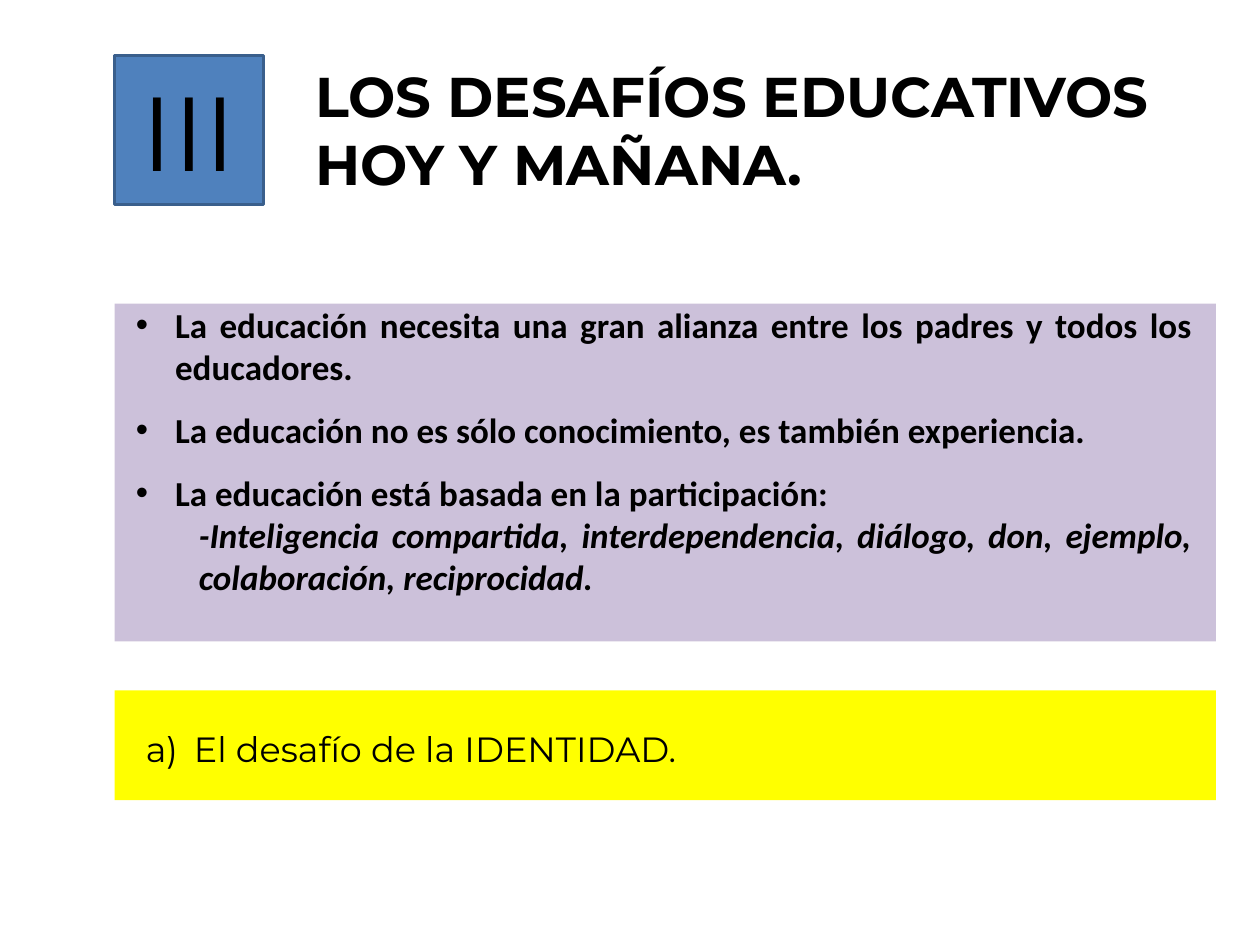
from dataclasses import dataclass

from lxml import etree
from pptx import Presentation
from pptx.dml.color import RGBColor
from pptx.enum.shapes import MSO_SHAPE
from pptx.enum.text import MSO_ANCHOR, PP_ALIGN
from pptx.oxml.ns import qn
from pptx.util import Cm, Pt

RECTANGLE = MSO_SHAPE.RECTANGLE
TOP, MIDDLE = MSO_ANCHOR.TOP, MSO_ANCHOR.MIDDLE
LEFT, CENTER, JUSTIFY = PP_ALIGN.LEFT, PP_ALIGN.CENTER, PP_ALIGN.JUSTIFY


@dataclass(frozen=True)
class Theme:
    ink: str = "000000"
    numeral_fill: str = "4F81BD"
    numeral_line: str = "3A5F8C"
    ideas_fill: str = "CCC1DA"
    challenge_fill: str = "FFFF00"
    heading_font: str = "Montserrat"
    body_font: str = "Calibri"
    numeral_size: int = 60
    title_size: int = 32
    body_size: int = 20


THEME = Theme()


def add_panel(left, top, width, height, fill, line=None):
    panel = slide.shapes.add_shape(RECTANGLE, Cm(left), Cm(top), Cm(width), Cm(height))
    panel.shadow.inherit = False
    panel.fill.solid()
    panel.fill.fore_color.rgb = RGBColor.from_string(fill)
    if line:
        panel.line.color.rgb = RGBColor.from_string(line)
        panel.line.width = Pt(2)
    else:
        panel.line.fill.background()
    return panel


def write(paragraph, text, *, size, font=THEME.heading_font, bold=False, italic=False,
          align=LEFT, indent=0, hanging=0, bullet=None, level=0, before=0):
    paragraph.alignment = align
    paragraph.level = level
    paragraph.space_before = Pt(before)
    properties = paragraph._p.get_or_add_pPr()
    properties.set("marL", str(Cm(indent)))
    properties.set("indent", str(-Cm(hanging)))
    if bullet:
        etree.SubElement(properties, qn("a:buFont")).set("typeface", "Arial")
        etree.SubElement(properties, qn("a:buChar")).set("char", bullet)
    run = paragraph.add_run()
    run.text = text
    run.font.name = font
    run.font.size = Pt(size)
    run.font.bold = bold
    run.font.italic = italic
    run.font.color.rgb = RGBColor.from_string(THEME.ink)


presentation = Presentation()
presentation.slide_width, presentation.slide_height = Cm(25.4), Cm(19.05)
slide = presentation.slides.add_slide(presentation.slide_layouts[5])

MARGIN, CONTENT_WIDTH = 2.31, 22.2
HEADER_TOP, HEADER_HEIGHT = 1.12, 3

# Title
title = slide.shapes.title
title.left, title.top = Cm(6.1), Cm(HEADER_TOP)
title.width, title.height = Cm(18.4), Cm(HEADER_HEIGHT)
heading = title.text_frame
heading.vertical_anchor = TOP
heading.word_wrap = True
heading.add_paragraph()
for paragraph, line in zip(heading.paragraphs, ("LOS DESAFÍOS EDUCATIVOS", "HOY Y MAÑANA.")):
    write(paragraph, line, size=THEME.title_size, bold=True)

# Section numeral
numeral = add_panel(MARGIN, HEADER_TOP, HEADER_HEIGHT, HEADER_HEIGHT,
                    THEME.numeral_fill, THEME.numeral_line).text_frame
numeral.vertical_anchor = MIDDLE
numeral.margin_top = numeral.margin_bottom = 0
write(numeral.paragraphs[0], "III", size=THEME.numeral_size, align=CENTER)

# Main ideas
ideas = add_panel(MARGIN, 6.12, CONTENT_WIDTH, 6.81, THEME.ideas_fill).text_frame
ideas.vertical_anchor = TOP
ideas.word_wrap = True
ideas.margin_left, ideas.margin_right, ideas.margin_top = Cm(0.43), Cm(0.48), 0
BULLETED = {"bullet": "•", "indent": 0.79, "hanging": 0.79}
IDEAS = [
    ("La educación necesita una gran alianza entre los padres y todos los educadores.", BULLETED),
    ("La educación no es sólo conocimiento, es también experiencia.", BULLETED | {"before": 12}),
    ("La educación está basada en la participación:", BULLETED | {"before": 12}),
    ("-Inteligencia compartida, interdependencia, diálogo, don, ejemplo, "
     "colaboración, reciprocidad.", {"level": 1, "indent": 1.27, "italic": True}),
]
for number, (idea, layout) in enumerate(IDEAS):
    paragraph = ideas.add_paragraph() if number else ideas.paragraphs[0]
    write(paragraph, idea, size=THEME.body_size, font=THEME.body_font, bold=True,
          align=JUSTIFY, **layout)

# First challenge
challenge = add_panel(MARGIN, 13.92, CONTENT_WIDTH, 2.21, THEME.challenge_fill).text_frame
challenge.vertical_anchor = MIDDLE
challenge.word_wrap = True
challenge.margin_left, challenge.margin_top, challenge.margin_bottom = Cm(0.63), Cm(0.13), 0
write(challenge.paragraphs[0], "a)\tEl desafío de la IDENTIDAD.", size=THEME.body_size,
      indent=0.97, hanging=0.97)

presentation.save("out.pptx")
